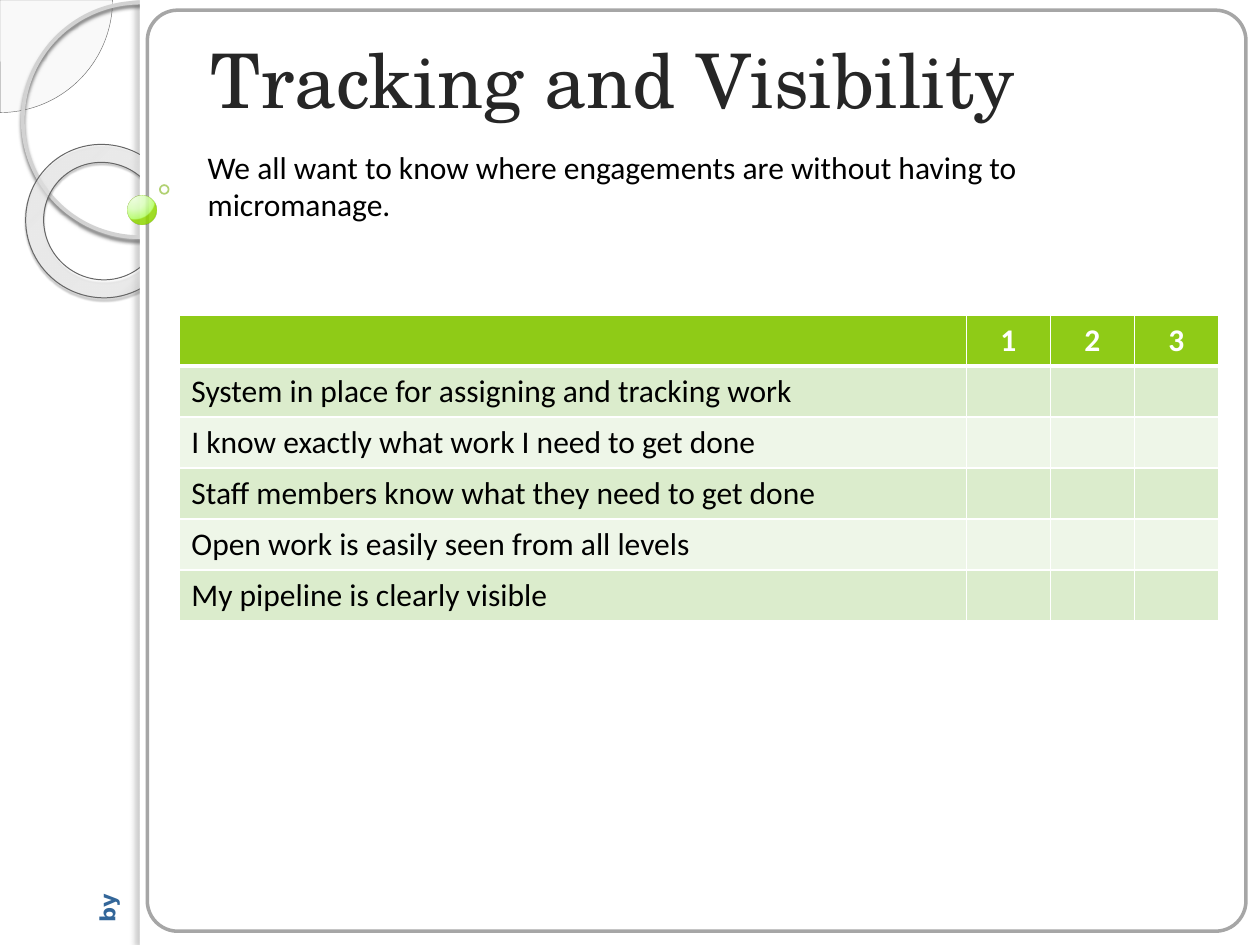
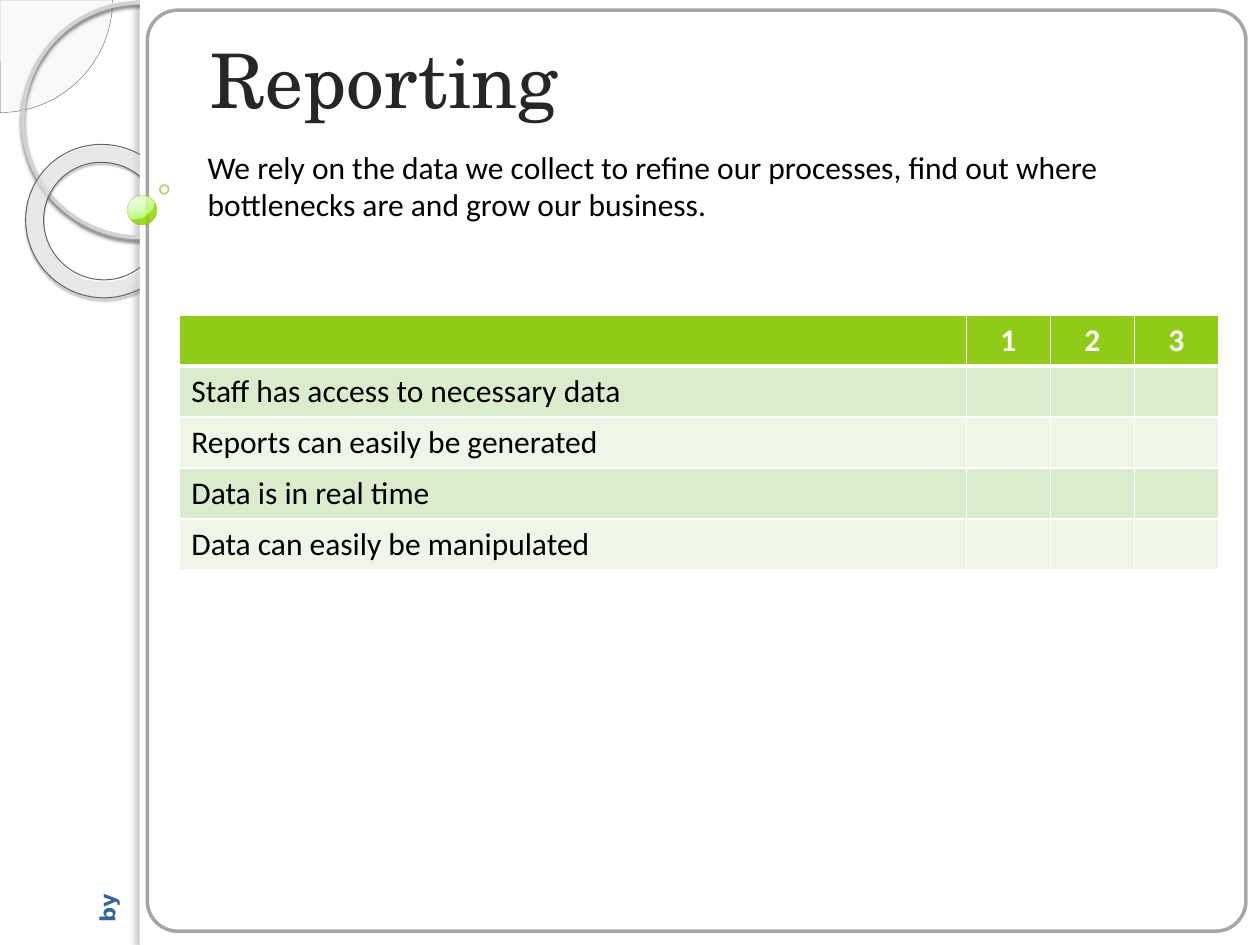
"""Build two checklist slides with a shared ornamental side band."""
from dataclasses import dataclass

from pptx import Presentation
from pptx.dml.color import RGBColor
from pptx.enum.shapes import MSO_SHAPE
from pptx.enum.text import MSO_ANCHOR, MSO_AUTO_SIZE, PP_ALIGN
from pptx.oxml import parse_xml
from pptx.oxml.ns import nsdecls, qn
from pptx.util import Pt

RECTANGLE, ROUNDED = MSO_SHAPE.RECTANGLE, MSO_SHAPE.ROUNDED_RECTANGLE
ELLIPSE, PIE, DONUT = MSO_SHAPE.OVAL, MSO_SHAPE.PIE, MSO_SHAPE.DONUT
LEFT, CENTER = PP_ALIGN.LEFT, PP_ALIGN.CENTER
MIDDLE, FIXED = MSO_ANCHOR.MIDDLE, MSO_AUTO_SIZE.NONE
TITLE_ONLY = 5


@dataclass(frozen=True)
class Theme:
    white: str = "FFFFFF"
    black: str = "000000"
    title: str = "262626"
    byline: str = "336699"
    header: str = "8FCB17"
    bands: tuple = ("DBECCC", "EEF6E8")
    quarter: str = "EEEEEE"
    quarter_line: str = "6D6D6D"
    ring: str = "D2D2D2"
    donut_line: str = "666666"
    frame: str = "A6A6A6"
    bead_line: str = "8BCB0D"
    bubble: str = "7EB314"
    donut_stops: tuple = ((0, "F5F5F5", 70), (70, "FAFAFA", 55), (100, "707070", 60))
    bead_stops: tuple = ((0, "EDFFDE", 95), (50, "DCFFBD", 90),
                         (95, "B5FF67", 88), (100, "90D800", 85))
    title_font: str = "TeX Gyre Schola"
    body_font: str = "Calibri"
    byline_font: str = "DejaVu Sans"
    title_size: int = 43
    body_size: int = 18
    byline_size: int = 12


THEME = Theme()

ORNAMENTS = [
    dict(kind=RECTANGLE, box=(80, 0, 6, 540), fill=THEME.white,
         shadow=("3F3F3F", 25, 3, 3, 180)),
    dict(kind=PIE, box=(-64.3, -64.3, 128.6, 128.6), adjustments=(0, 54),
         fill=THEME.quarter, fill_alpha=33, line=(THEME.quarter_line, 0.25, 100)),
    dict(kind=ELLIPSE, box=(13, 1.5, 134, 134), line=(THEME.ring, 2.15, 100),
         shadow=("5E5E5E", 85, 2, 2, 90)),
    dict(kind=DONUT, box=(14.4, 82.8, 88.6, 87.1), adjustments=(0.118,), rotation=38.6,
         gradient=(THEME.donut_stops, (-408, -50, 508, 150)),
         line=(THEME.donut_line, 0.58, 100), shadow=("2F2F2F", 35, 1, 1.2, 75)),
    dict(kind=RECTANGLE, box=(80, 0, 640, 540), fill=THEME.white),
    dict(kind=ROUNDED, box=(84.2, 5.8, 627.8, 526.3), adjustments=(0.033,),
         fill=THEME.white, line=(THEME.frame, 2, 100)),
    dict(kind=ELLIPSE, box=(72.7, 111.6, 16.6, 16.6),
         gradient=(THEME.bead_stops, (25, 12, 75, 88)), line=(THEME.bead_line, 0.16, 60)),
    dict(kind=ELLIPSE, box=(91.4, 105.8, 5, 5), line=(THEME.bubble, 1, 60)),
]

SLIDES = [
    ("Tracking and Visibility",
     "We all want to know where engagements are without having to micromanage.",
     ["System in place for assigning and tracking work",
      "I know exactly what work I need to get done",
      "Staff members know what they need to get done",
      "Open work is easily seen from all levels",
      "My pipeline is clearly visible"]),
    ("Reporting",
     "We rely on the data we collect to refine our processes, find out where "
     "bottlenecks are and grow our business.",
     ["Staff has access to necessary data",
      "Reports can easily be generated",
      "Data is in real time",
      "Data can easily be manipulated"]),
]

COLUMN_WIDTHS = (450, 48, 48, 48)
ROW_HEIGHT = 29.16


def add_ornament(slide, kind, box, adjustments=(), rotation=0, fill=None, fill_alpha=100,
                 gradient=None, line=None, shadow=None):
    shape = slide.shapes.add_shape(kind, *map(Pt, box))
    shape.rotation = rotation
    shape.shadow.inherit = False
    properties = shape.element.spPr
    for index, value in enumerate(adjustments):
        shape.adjustments[index] = value
    if gradient:
        stops, focus = gradient
        stop_xml = "".join(
            f'<a:gs pos="{position * 1000}"><a:srgbClr val="{color}">'
            f'<a:alpha val="{alpha * 1000}"/></a:srgbClr></a:gs>'
            for position, color, alpha in stops)
        edges = " ".join(f'{side}="{value * 1000}"' for side, value in zip("ltrb", focus))
        properties.insert(2, parse_xml(
            f'<a:gradFill {nsdecls("a")}><a:gsLst>{stop_xml}</a:gsLst>'
            f'<a:path path="circle"><a:fillToRect {edges}/></a:path></a:gradFill>'))
    elif fill:
        shape.fill.solid()
        shape.fill.fore_color.rgb = RGBColor.from_string(fill)
        color_element = properties.find(qn("a:solidFill")).find(qn("a:srgbClr"))
        color_element.append(parse_xml(f'<a:alpha {nsdecls("a")} val="{fill_alpha * 1000}"/>'))
    else:
        shape.fill.background()
    if line:
        color, width, alpha = line
        shape.line.color.rgb = RGBColor.from_string(color)
        shape.line.width = Pt(width)
        color_element = next(properties.find(qn("a:ln")).iter(qn("a:srgbClr")))
        color_element.append(parse_xml(f'<a:alpha {nsdecls("a")} val="{alpha * 1000}"/>'))
    else:
        shape.line.fill.background()
    if shadow:
        color, alpha, blur, distance, angle = shadow
        properties.find(qn("a:effectLst")).append(parse_xml(
            f'<a:outerShdw {nsdecls("a")} blurRad="{Pt(blur)}" dist="{Pt(distance)}" '
            f'dir="{angle * 60000}" rotWithShape="0"><a:srgbClr val="{color}">'
            f'<a:alpha val="{alpha * 1000}"/></a:srgbClr></a:outerShdw>'))


def write(text_frame, text, font, size, color, bold=False, alignment=LEFT):
    paragraph = text_frame.paragraphs[0]
    paragraph.alignment = alignment
    run = paragraph.add_run()
    run.text = text
    run.font.name = font
    run.font.size = Pt(size)
    run.font.bold = bold
    run.font.color.rgb = RGBColor.from_string(color)


presentation = Presentation()
presentation.slide_width = Pt(720)
presentation.slide_height = Pt(540)

for heading, introduction, statements in SLIDES:
    slide = presentation.slides.add_slide(presentation.slide_layouts[TITLE_ONLY])
    for ornament in ORNAMENTS:
        add_ornament(slide, **ornament)

    byline = slide.shapes.add_textbox(Pt(43.2), Pt(505.4), Pt(36), Pt(21.6))
    byline.rotation = 270
    byline.text_frame.word_wrap = True
    write(byline.text_frame, "by", THEME.byline_font, THEME.byline_size, THEME.byline, bold=True)

    rows = [("", "1", "2", "3")] + [(statement, "", "", "") for statement in statements]
    table = slide.shapes.add_table(
        len(rows), len(COLUMN_WIDTHS), Pt(102.2), Pt(180),
        Pt(sum(COLUMN_WIDTHS)), Pt(ROW_HEIGHT * len(rows))).table
    for column, width in zip(table.columns, COLUMN_WIDTHS):
        column.width = Pt(width)
    for row_index, values in enumerate(rows):
        table.rows[row_index].height = Pt(ROW_HEIGHT)
        is_header = row_index == 0
        borders = {"L": 1, "R": 1, "T": 3 if row_index == 1 else 1, "B": 3 if is_header else 1}
        for column_index, value in enumerate(values):
            cell = table.cell(row_index, column_index)
            cell_properties = cell._tc.get_or_add_tcPr()
            for side, width in borders.items():
                cell_properties.append(parse_xml(
                    f'<a:ln{side} {nsdecls("a")} w="{Pt(width)}"><a:solidFill>'
                    f'<a:srgbClr val="{THEME.white}"/></a:solidFill></a:ln{side}>'))
            cell.fill.solid()
            cell.fill.fore_color.rgb = RGBColor.from_string(
                THEME.header if is_header else THEME.bands[(row_index - 1) % 2])
            if value:
                write(cell.text_frame, value, THEME.body_font, THEME.body_size,
                      THEME.white if is_header else THEME.black, bold=is_header,
                      alignment=CENTER if is_header else LEFT)

    title = slide.shapes.title
    title.left, title.top, title.width, title.height = Pt(113), Pt(0), Pt(583.2), Pt(90)
    title.text_frame.vertical_anchor = MIDDLE
    title.text_frame.auto_size = FIXED
    write(title.text_frame, heading, THEME.title_font, THEME.title_size, THEME.title)
    slide.shapes.element.append(title.element)

    body = slide.shapes.add_textbox(Pt(111.6), Pt(80.8), Pt(583.2), Pt(51))
    body.text_frame.word_wrap = True
    write(body.text_frame, introduction, THEME.body_font, THEME.body_size, THEME.black)

presentation.save("out.pptx")
